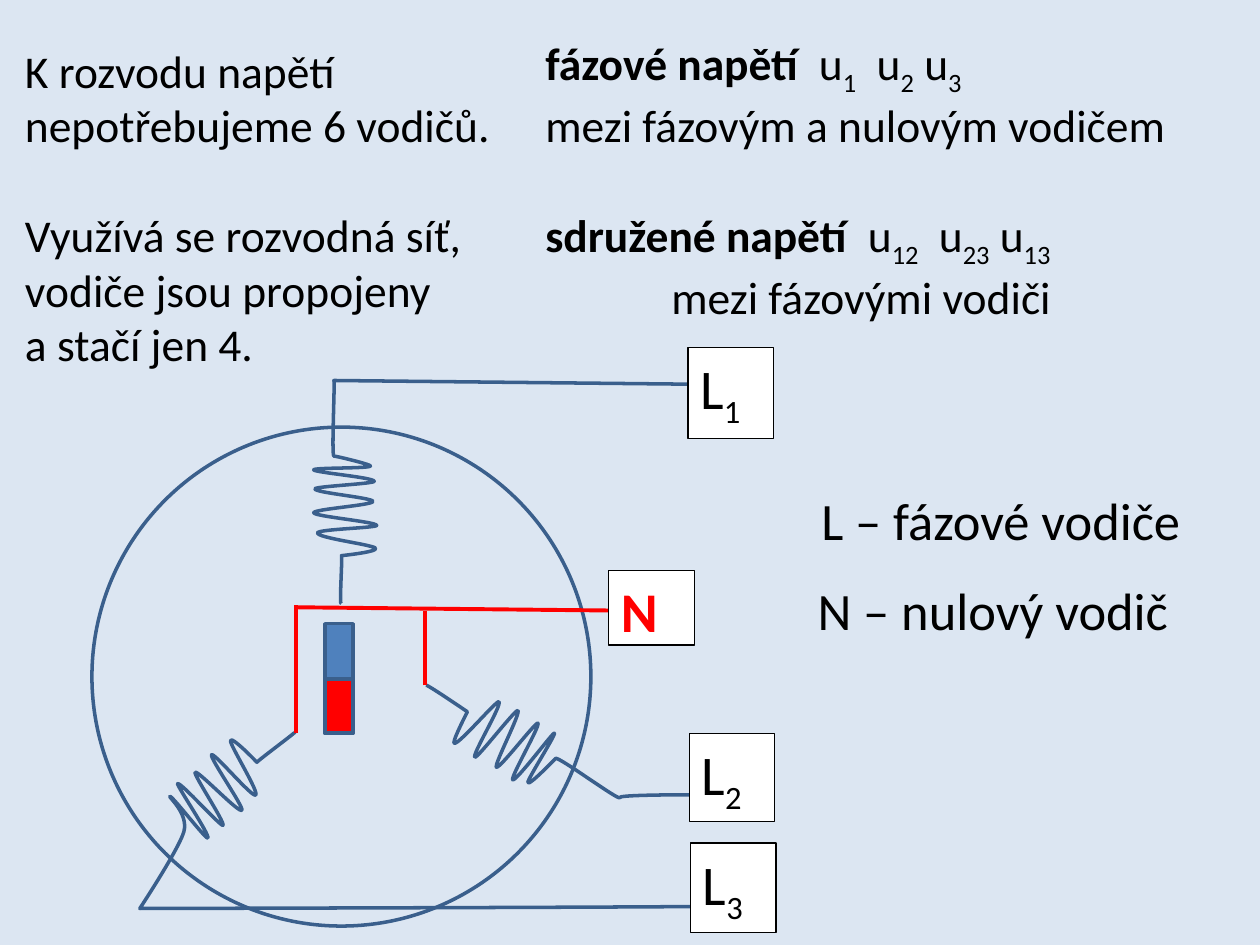
from lxml import etree
from pptx import Presentation
from pptx import util as u
from pptx.dml.color import RGBColor
from pptx.enum import shapes, text
from pptx.oxml.ns import qn

COLORS = {"back": "DCE6F2", "wire": "3A5F8C", "north": "4F81BD", "red": "FF0000",
          "black": "000000", "white": "FFFFFF"}
FONT = "Calibri"

# Text: a run is (wording, style), style "b" is bold and "sub" is subscript.
# A paragraph is (runs, space before in points, left indent in inches).
NOTES = [
    ((0.1, 0.29, 4.04, 2.66), 26, [
        ([("K\u00a0rozvodu napětí nepotřebujeme 6 vodičů.", "")], 0, 0),
        ([("Využívá se rozvodná síť, vodiče jsou propojeny \va stačí jen 4.", "")], 31.7, 0)]),
    ((4.23, 0.23, 5.94, 3.28), 26, [
        ([("fázové napětí", "b"), ("  u", ""), ("1", "sub"), ("  u", ""), ("2", "sub"),
          (" u", ""), ("3", "sub")], 0, 0),
        ([("mezi fázovým a nulovým vodičem", "")], 0, 0),
        ([("sdružené napětí", "b"), ("  u", ""), ("12", "sub"), ("  u", ""), ("23", "sub"),
          (" u", ""), ("13", "sub")], 31.7, 0),
        ([("mezi fázovými vodiči", "")], 0, 1)]),
    ((6.42, 3.82, 3.44, 0.65), 30, [([("L – fázové vodiče", "")], 0, 0)]),
    ((6.39, 4.54, 3.44, 0.65), 30, [([("N – nulový vodič", "")], 0, 0)]),
]

# Terminals: place, runs, text colour
TERMINALS = [
    ((5.46, 2.76, 0.68, 0.72), [("L", ""), ("1", "sub")], "black"),
    ((5.47, 5.82, 0.68, 0.7), [("L", ""), ("2", "sub")], "black"),
    ((5.48, 6.69, 0.68, 0.71), [("L", ""), ("3", "sub")], "black"),
    ((4.83, 4.53, 0.68, 0.59), [("N", "b")], "red"),
]

# Coils: a start point, then Bézier segments of two handles and an end point
COILS = [
    ((5.53, 3.05), [
        (5.52, 3.05, 2.64, 3.02, 2.65, 3.02), (2.66, 3.01, 2.63, 3.61, 2.65, 3.62),
        (2.67, 3.62, 2.96, 3.69, 2.94, 3.7), (2.91, 3.72, 2.48, 3.71, 2.49, 3.73),
        (2.5, 3.75, 2.97, 3.79, 2.97, 3.82), (2.97, 3.84, 2.5, 3.86, 2.5, 3.88),
        (2.49, 3.91, 2.96, 3.95, 2.96, 3.98), (2.96, 4.01, 2.49, 4.04, 2.49, 4.07),
        (2.5, 4.1, 2.98, 4.14, 2.99, 4.17), (2.99, 4.19, 2.52, 4.2, 2.52, 4.23),
        (2.52, 4.27, 2.94, 4.32, 2.98, 4.35), (3.01, 4.38, 2.71, 4.41, 2.71, 4.41),
        (2.72, 4.41, 2.69, 4.83, 2.71, 4.79)]),
    ((5.9, 6.31), [
        (5.9, 6.31, 4.92, 6.3, 4.92, 6.33), (4.93, 6.37, 4.43, 6, 4.41, 6.02),
        (4.4, 6.03, 4.19, 6.25, 4.19, 6.21), (4.19, 6.18, 4.42, 5.82, 4.4, 5.82),
        (4.39, 5.81, 4.1, 6.2, 4.07, 6.19), (4.05, 6.17, 4.29, 5.76, 4.27, 5.74),
        (4.25, 5.73, 3.97, 6.1, 3.94, 6.09), (3.92, 6.07, 4.14, 5.65, 4.11, 5.64),
        (4.09, 5.63, 3.79, 6.02, 3.77, 6.01), (3.74, 6, 3.99, 5.59, 3.96, 5.57),
        (3.94, 5.56, 3.66, 5.89, 3.61, 5.9), (3.57, 5.92, 3.71, 5.65, 3.71, 5.65),
        (3.71, 5.65, 3.36, 5.41, 3.38, 5.44)]),
    ((5.81, 7.19), [
        (5.81, 7.2, 1.11, 7.21, 1.11, 7.21), (1.11, 7.21, 1.42, 6.74, 1.46, 6.6),
        (1.5, 6.45, 1.32, 6.31, 1.35, 6.32), (1.38, 6.33, 1.64, 6.67, 1.65, 6.65),
        (1.67, 6.63, 1.4, 6.23, 1.41, 6.22), (1.43, 6.2, 1.75, 6.56, 1.77, 6.55),
        (1.79, 6.53, 1.53, 6.14, 1.55, 6.13), (1.57, 6.11, 1.9, 6.46, 1.92, 6.43),
        (1.94, 6.41, 1.66, 6.01, 1.68, 5.99), (1.7, 5.97, 2, 6.33, 2.03, 6.31),
        (2.06, 6.29, 1.83, 5.92, 1.83, 5.88), (1.83, 5.83, 2.04, 6.05, 2.04, 6.05),
        (2.04, 6.04, 2.38, 5.79, 2.34, 5.81)]),
]

NEUTRAL_WIRES = [(2.36, 4.82, 5.3, 4.85), (3.37, 5.44, 3.37, 4.85), (2.35, 5.82, 2.35, 4.8)]


def rgb(name):
    return RGBColor.from_string(COLORS[name])


def inches(values):
    return [u.Inches(value) for value in values]


def set_line(shape, color, width):
    shape.line.color.rgb = rgb(color)
    shape.line.width = u.Pt(width)


def add_solid(page, kind, place, fill, line, width):
    shape = page.shapes.add_shape(kind, *inches(place))
    shape.shadow.inherit = False
    shape.fill.solid()
    shape.fill.fore_color.rgb = rgb(fill)
    set_line(shape, line, width)
    return shape


def add_runs(para, runs, size, color):
    para.alignment = text.PP_ALIGN.LEFT
    for wording, style in runs:
        for part, piece in enumerate(wording.split("\v")):
            if part:
                para.add_line_break()
            span = para.add_run()
            span.text = piece
            span.font.name, span.font.size = FONT, u.Pt(size)
            span.font.bold = style == "b"
            span.font.color.rgb = rgb(color)
            if style == "sub":
                span.font._element.set("baseline", "-25000")


def add_note(page, place, size, paragraphs):
    frame = page.shapes.add_textbox(*inches(place)).text_frame
    frame.word_wrap = True
    for index, (runs, before, indent) in enumerate(paragraphs):
        para = frame.add_paragraph() if index else frame.paragraphs[0]
        para.space_before = u.Pt(before)
        if indent:
            para._p.get_or_add_pPr().set("marL", str(u.Inches(indent)))
        add_runs(para, runs, size, "black")


def add_coil(page, start, segments):
    points = [inches(seg[i:i + 2]) for seg in segments for i in (0, 2, 4)]
    builder = page.shapes.build_freeform(*inches(start))
    builder.add_line_segments(points, close=False)
    coil = builder.convert_to_shape()
    coil.shadow.inherit = False
    coil.fill.background()
    set_line(coil, "wire", 2)
    # Join each three straight steps into one Bézier segment
    steps = list(coil._element.iter(qn("a:lnTo")))
    for i in range(0, len(steps), 3):
        curve = etree.Element(qn("a:cubicBezTo"))
        steps[i].addprevious(curve)
        for step in steps[i:i + 3]:
            curve.append(step[0])
            step.getparent().remove(step)


def add_wire(page, ends):
    wire = page.shapes.add_connector(shapes.MSO_CONNECTOR.STRAIGHT, *inches(ends))
    set_line(wire, "red", 2.25)
    etree.SubElement(wire._element.spPr, qn("a:effectLst"))


def add_terminal(page, place, runs, color):
    box = add_solid(page, shapes.MSO_SHAPE.RECTANGLE, place, "white", "black", 0.75)
    frame = box.text_frame
    frame.word_wrap = True
    frame.vertical_anchor = text.MSO_ANCHOR.TOP
    frame.paragraphs[0].space_after = u.Pt(10)
    add_runs(frame.paragraphs[0], runs, 32, color)


def main():
    deck = Presentation()
    deck.slide_width, deck.slide_height = inches((10, 7.5))
    page = deck.slides.add_slide(deck.slide_layouts[6])
    page.background.fill.solid()
    page.background.fill.fore_color.rgb = rgb("back")

    for note in NOTES:
        add_note(page, *note)

    # Generator: stator ring, coils and rotor magnet
    add_solid(page, shapes.MSO_SHAPE.OVAL, (0.73, 3.39, 3.96, 3.96), "back", "wire", 2)
    for coil in COILS:
        add_coil(page, *coil)
    for place, fill in (((2.58, 4.95, 0.22, 0.87), "north"), ((2.58, 5.39, 0.22, 0.43), "red")):
        add_solid(page, shapes.MSO_SHAPE.RECTANGLE, place, fill, "wire", 2)

    # Neutral wires, then the terminals over the wire ends
    for ends in NEUTRAL_WIRES:
        add_wire(page, ends)
    for terminal in TERMINALS:
        add_terminal(page, *terminal)

    deck.save("out.pptx")


if __name__ == "__main__":
    main()
